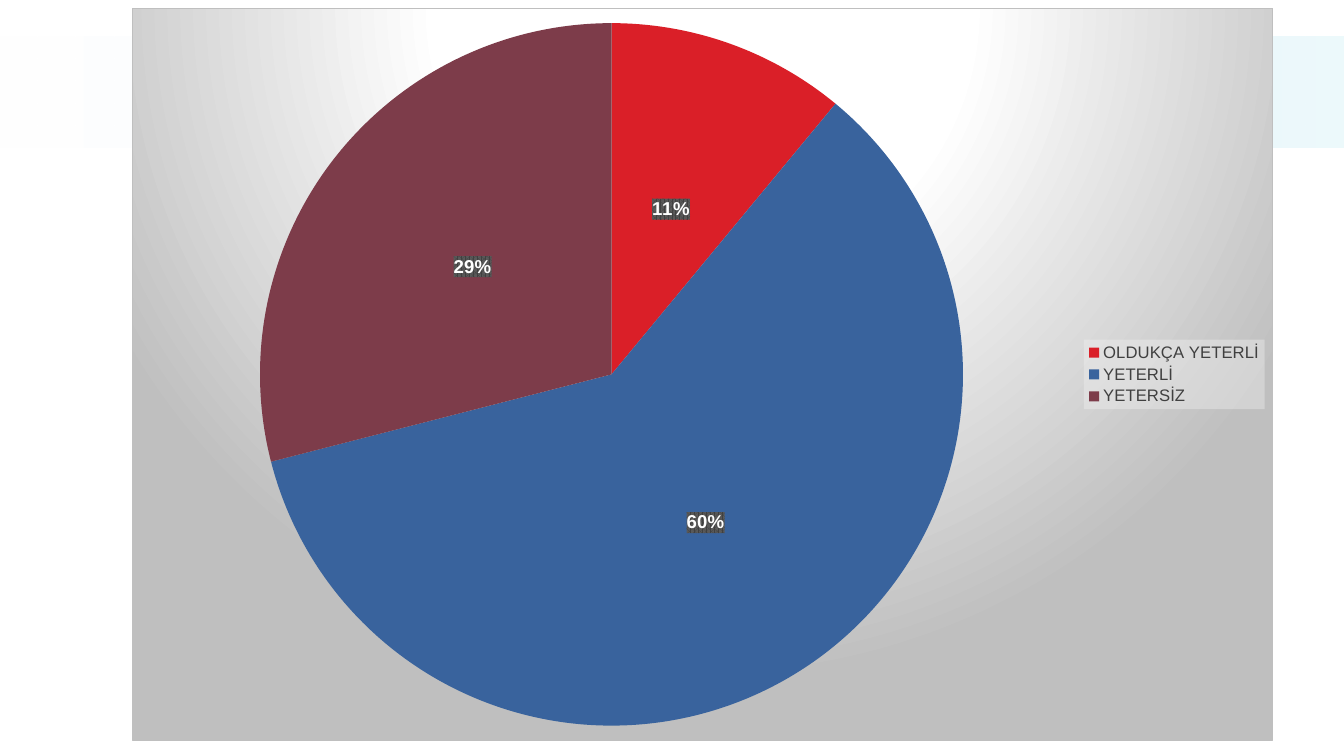
from lxml.etree import SubElement
from pptx import Presentation
from pptx.chart.data import CategoryChartData
from pptx.dml.color import RGBColor
from pptx.enum.chart import XL_CHART_TYPE, XL_LABEL_POSITION, XL_LEGEND_POSITION
from pptx.enum.shapes import MSO_SHAPE
from pptx.oxml import parse_xml
from pptx.oxml.ns import nsdecls, qn
from pptx.util import Inches, Pt

WHITE = RGBColor(0xFF, 0xFF, 0xFF)
BLACK = RGBColor(0x00, 0x00, 0x00)
AQUA = RGBColor(0xDE, 0xF5, 0xFA)
DARK = RGBColor(0x40, 0x40, 0x40)
SLATE = RGBColor(0x59, 0x59, 0x59)
SILVER = RGBColor(0xBF, 0xBF, 0xBF)
PALE = RGBColor(0xF2, 0xF2, 0xF2)
RED = RGBColor(0xDA, 0x1F, 0x28)
BLUE = RGBColor(0x39, 0x63, 0x9D)
WINE = RGBColor(0x7D, 0x3C, 0x4A)

ANSWERS = [
    ("OLDUKÇA YETERLİ", 11, RED),
    ("YETERLİ", 60, BLUE),
    ("YETERSİZ", 29, WINE),
]

BACKDROP = f"""<a:gradFill rotWithShape="1"><a:gsLst>
<a:gs pos="0"><a:srgbClr val="{WHITE}"/></a:gs>
<a:gs pos="39000"><a:srgbClr val="{WHITE}"/></a:gs>
<a:gs pos="100000"><a:srgbClr val="{SILVER}"/></a:gs></a:gsLst>
<a:path path="circle"><a:fillToRect l="50000" t="-80000" r="50000" b="180000"/></a:path>
</a:gradFill><a:ln w="9525"><a:solidFill><a:srgbClr val="{SILVER}"/></a:solidFill></a:ln>"""
LABEL_FILL = f"""<a:pattFill prst="pct75"><a:fgClr><a:srgbClr val="{DARK}"/></a:fgClr>
<a:bgClr><a:srgbClr val="{SLATE}"/></a:bgClr></a:pattFill><a:ln><a:noFill/></a:ln>"""
LEGEND_FILL = f"""<a:solidFill><a:srgbClr val="{PALE}"><a:alpha val="39000"/></a:srgbClr>
</a:solidFill><a:ln><a:noFill/></a:ln>"""


def set_font(font, color, **values):
    font.color.rgb = color
    for name, value in {"name": "Arial", **values}.items():
        setattr(font, name, value)


def paint(node, fill):
    """Give a chart part its fill, just before its text properties."""
    props = parse_xml(f"<c:spPr {nsdecls('c', 'a')}>{fill}</c:spPr>")
    node.find(qn("c:txPr")).addprevious(props)


def place_plot(chart, **box):
    """Set the inner plot area as fractions of the chart."""
    area = chart.plots[0]._element.getparent()
    for old in area.findall(qn("c:layout")):
        area.remove(old)
    values = {"layoutTarget": "inner", "xMode": "edge", "yMode": "edge", **box}
    parts = "".join(f'<c:{key} val="{val}"/>' for key, val in values.items())
    area.insert(0, parse_xml(
        f"<c:layout {nsdecls('c')}><c:manualLayout>{parts}</c:manualLayout></c:layout>"))


def add_band(slide):
    band = slide.shapes.add_shape(
        MSO_SHAPE.RECTANGLE, Inches(0), Inches(0.36), Inches(13.33), Inches(1.1))
    band.shadow.inherit = False
    band.line.fill.background()
    band.fill.gradient()
    band.fill.gradient_angle = 0
    for stop, color, place in zip(band.fill.gradient_stops, (WHITE, AQUA), (0, 1)):
        stop.color.rgb = color
        stop.position = place
    last = band._element.spPr.findall(".//" + qn("a:srgbClr"))[-1]
    SubElement(last, qn("a:alpha")).set("val", "54000")


def add_pie(slide):
    names, values, colors = zip(*ANSWERS)
    data = CategoryChartData()
    data.categories = names
    data.add_series("Series 1", values)
    chart = slide.shapes.add_chart(
        XL_CHART_TYPE.PIE, Inches(1.31), Inches(0.08), Inches(11.32), Inches(7.27), data).chart
    chart.has_title = False
    set_font(chart.font, BLACK, size=Pt(10))
    paint(chart._chartSpace, BACKDROP)
    place_plot(chart, x=0.11, y=0.02, w=0.62, h=0.96)

    plot = chart.plots[0]
    plot.vary_by_categories = True
    for index, color in enumerate(colors):
        form = plot.series[0].points[index].format
        form.fill.solid()
        form.fill.fore_color.rgb = color
        form.line.fill.background()

    plot.has_data_labels = True
    labels = plot.data_labels
    set_font(labels.font, WHITE, size=Pt(13.3), bold=True)
    looks = {"show_percentage": True, "show_value": False, "number_format": "0%",
             "number_format_is_linked": False, "position": XL_LABEL_POSITION.CENTER}
    for name, value in looks.items():
        setattr(labels, name, value)
    paint(labels._element, LABEL_FILL)

    chart.has_legend = True
    legend = chart.legend
    legend.position = XL_LEGEND_POSITION.RIGHT
    legend.include_in_layout = False
    set_font(legend.font, DARK, size=Pt(11.9))
    paint(legend._element, LEGEND_FILL)


def main():
    deck = Presentation()
    deck.slide_width, deck.slide_height = Inches(13.33), Inches(7.5)
    slide = deck.slides.add_slide(deck.slide_layouts[6])
    add_band(slide)
    add_pie(slide)
    deck.save("out.pptx")


if __name__ == "__main__":
    main()
